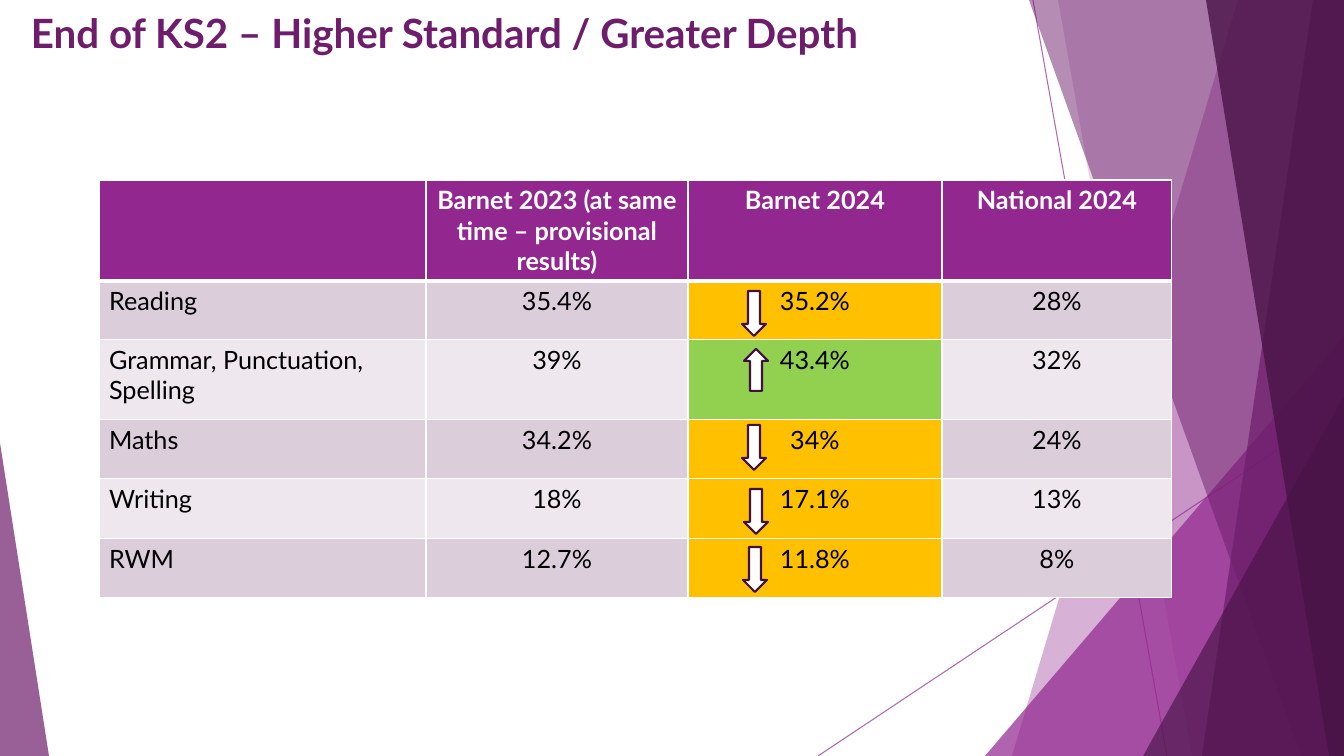
from dataclasses import dataclass

from lxml import etree
from pptx import Presentation
from pptx.dml.color import RGBColor
from pptx.enum.shapes import MSO_CONNECTOR, MSO_SHAPE as SHAPE
from pptx.enum.text import MSO_ANCHOR as ANCHOR, PP_ALIGN as ALIGN
from pptx.oxml.ns import qn
from pptx.util import Emu, Pt

SCALE = 914400 / 100.8  # EMU in one px
W, H = 1344, 756


@dataclass(frozen=True)
class Theme:
    font: str = "Lato"
    title_size: float = 28.8
    body_size: float = 18
    purple: str = "92278F"
    plum: str = "6D1D6B"
    dark: str = "491447"
    outline: str = "40113F"
    white: str = "FFFFFF"
    black: str = "000000"
    band_odd: str = "DCCDDB"
    band_even: str = "EEE8EE"
    amber: str = "FFC000"
    green: str = "92D050"


def px(n):
    return Emu(round(n * SCALE))


def paint(fill, color, alpha=100):
    fill.solid()
    fill.fore_color.rgb = RGBColor.from_string(color)
    if alpha < 100:
        clr = fill._xPr.find(qn("a:solidFill"))[0]
        etree.SubElement(clr, qn("a:alpha"), val=str(alpha * 1000))


def write(tf, text, *, font, size, color, bold=False, align=ALIGN.LEFT, spacing=None):
    p = tf.paragraphs[0]
    p.alignment = align
    if spacing:
        p.line_spacing = spacing
    r = p.add_run()
    r.text = text
    r.font.name, r.font.size, r.font.bold = font, Pt(size), bold
    r.font.color.rgb = RGBColor.from_string(color)


class Deck:
    def __init__(self, theme):
        self.theme = theme
        self.prs = Presentation()
        self.prs.slide_width, self.prs.slide_height = px(W), px(H)
        self.s = self.prs.slides.add_slide(self.prs.slide_layouts[6])

    def line(self, x1, y1, x2, y2):
        c = self.s.shapes.add_connector(MSO_CONNECTOR.STRAIGHT, px(x1), px(y1), px(x2), px(y2))
        c.line.width = Pt(0.75)
        paint(c.line.fill, self.theme.purple, 70)
        etree.SubElement(c._element.spPr, qn("a:effectLst"))

    def finish(self, sp, color, alpha=100):
        sp.shadow.inherit = False
        paint(sp.fill, color, alpha)
        sp.line.fill.background()
        return sp

    def facet(self, top_x, bottom_x, color, alpha):
        """Fill everything between a slanted edge and the slide's right side."""
        fb = self.s.shapes.build_freeform(top_x, 0, scale=SCALE)
        fb.add_line_segments([(W, 0), (W, H), (bottom_x, H)], close=True)
        self.finish(fb.convert_to_shape(), color, alpha)

    def shape(self, kind, x, y, w, h, color, alpha=100):
        sp = self.s.shapes.add_shape(kind, px(x), px(y), px(w), px(h))
        return self.finish(sp, color, alpha)

    def triangle(self, x, y, w, apex, color, alpha):
        sp = self.shape(SHAPE.ISOSCELES_TRIANGLE, x, y, w, H - y, color, alpha)
        sp.adjustments[0] = apex

    def arrow(self, kind, x, y, h):
        sp = self.shape(kind, x, y, 24, h, self.theme.white)
        sp.line.color.rgb = RGBColor.from_string(self.theme.outline)
        sp.line.width = Pt(1.5)

    def title(self, text, x, y, w, h):
        t = self.theme
        tf = self.s.shapes.add_textbox(px(x), px(y), px(w), px(h)).text_frame
        tf.word_wrap = True
        tf.vertical_anchor = ANCHOR.BOTTOM
        write(tf, text, font=t.font, size=t.title_size, color=t.plum, bold=True, spacing=0.9)

    def cell(self, cell, text, fill, edges, **fmt):
        tcPr = cell._tc.get_or_add_tcPr()
        for side, width in zip("LRTB", edges):
            ln = etree.SubElement(tcPr, qn(f"a:ln{side}"), w=str(Pt(width)))
            solid = etree.SubElement(ln, qn("a:solidFill"))
            etree.SubElement(solid, qn("a:srgbClr"), val=self.theme.white)
        paint(cell.fill, fill)
        if text:
            write(cell.text_frame, text, font=self.theme.font, size=self.theme.body_size, **fmt)

    def table(self, x, y, cols, heights, rows, status):
        t = self.theme
        tbl = self.s.shapes.add_table(len(rows), len(cols), px(x), px(y),
                                      px(sum(cols)), px(sum(heights))).table
        for col, w in zip(tbl.columns, cols):
            col.width = px(w)
        for i, (h, row) in enumerate(zip(heights, rows)):
            tbl.rows[i].height = px(h)
            head = i == 0
            edges = (1, 1, 3 if i == 1 else 1, 3 if head else 1)
            band = t.purple if head else t.band_odd if i % 2 else t.band_even
            for j, text in enumerate(row):
                fill = status[i - 1] if j == 2 and not head else band
                self.cell(tbl.cell(i, j), text, fill, edges, bold=head,
                          color=t.white if head else t.black,
                          align=ALIGN.CENTER if j else ALIGN.LEFT)


ROWS = [
    ("", "Barnet 2023 (at same time – provisional results)", "Barnet 2024", "National 2024"),
    ("Reading", "35.4%", "35.2%", "28%"),
    ("Grammar, Punctuation, Spelling", "39%", "43.4%", "32%"),
    ("Maths", "34.2%", "34%", "24%"),
    ("Writing", "18%", "17.1%", "13%"),
    ("RWM", "12.7%", "11.8%", "8%"),
]


def main():
    t = Theme()
    d = Deck(t)

    # Background facets, back to front
    d.line(1033, 0, 1167, H)
    d.line(W, 406, 818, H)
    d.facet(1238, 1012, t.purple, 36)
    d.facet(1058, 1192, t.purple, 20)
    d.triangle(985, 336, 359, 1, t.purple, 72)
    d.facet(1029, 1301, t.plum, 50)
    d.facet(1313, 1202, t.plum, 70)
    d.facet(1206, 1329, t.dark, 80)
    d.triangle(1143, 396, 201, 1, t.dark, 66)
    d.triangle(0, 443, 49, 0, t.plum, 70)

    # Title
    d.title("End of KS2 – Higher Standard / Greater Depth", 21, 21, 1050, 41)

    # Results, with the 2024 column coloured by direction of change
    d.table(99, 180, cols=(327, 262, 254, 230), heights=(100, 59, 80, 59, 60, 59),
            rows=ROWS, status=(t.amber, t.green, t.amber, t.amber, t.amber))

    # Change arrows
    d.arrow(SHAPE.UP_ARROW, 744, 349, 42)
    for x, y in ((742, 291), (742, 425), (744, 489), (743, 547)):
        d.arrow(SHAPE.DOWN_ARROW, x, y, 45)

    d.prs.save("out.pptx")


if __name__ == "__main__":
    main()
